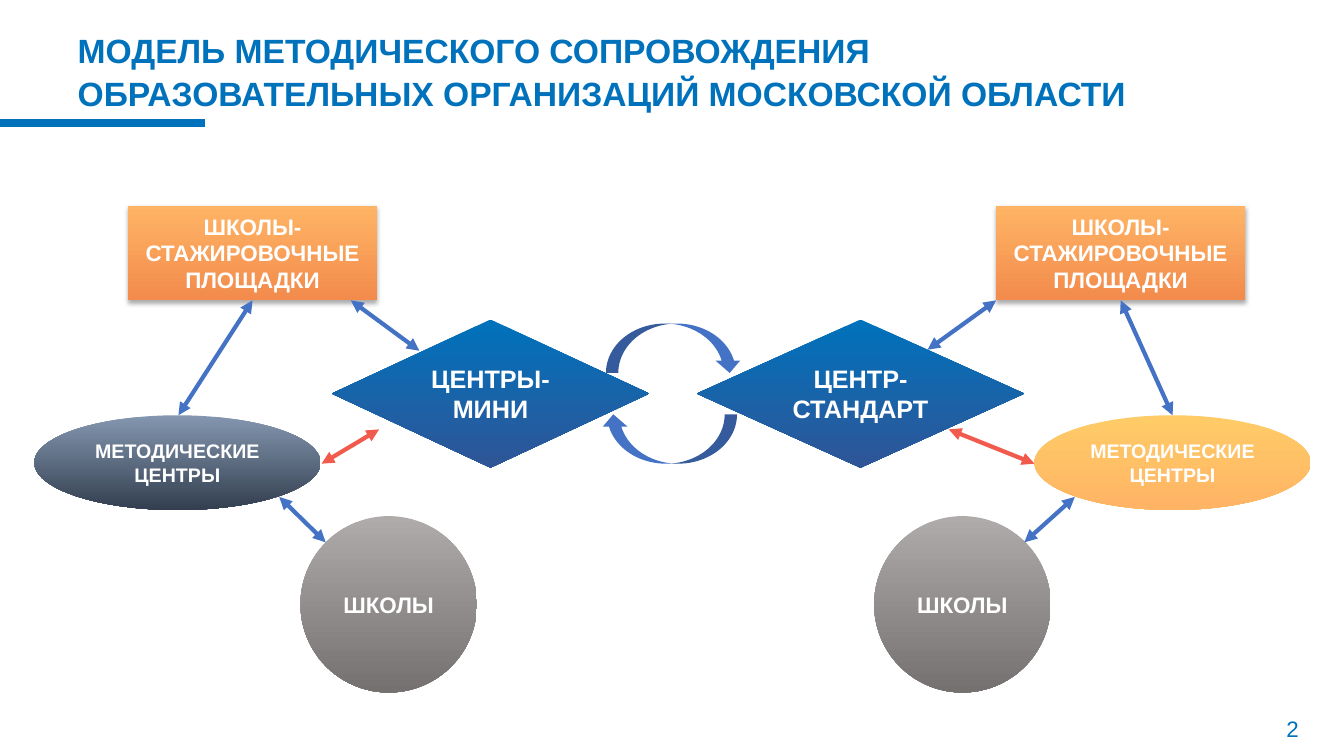
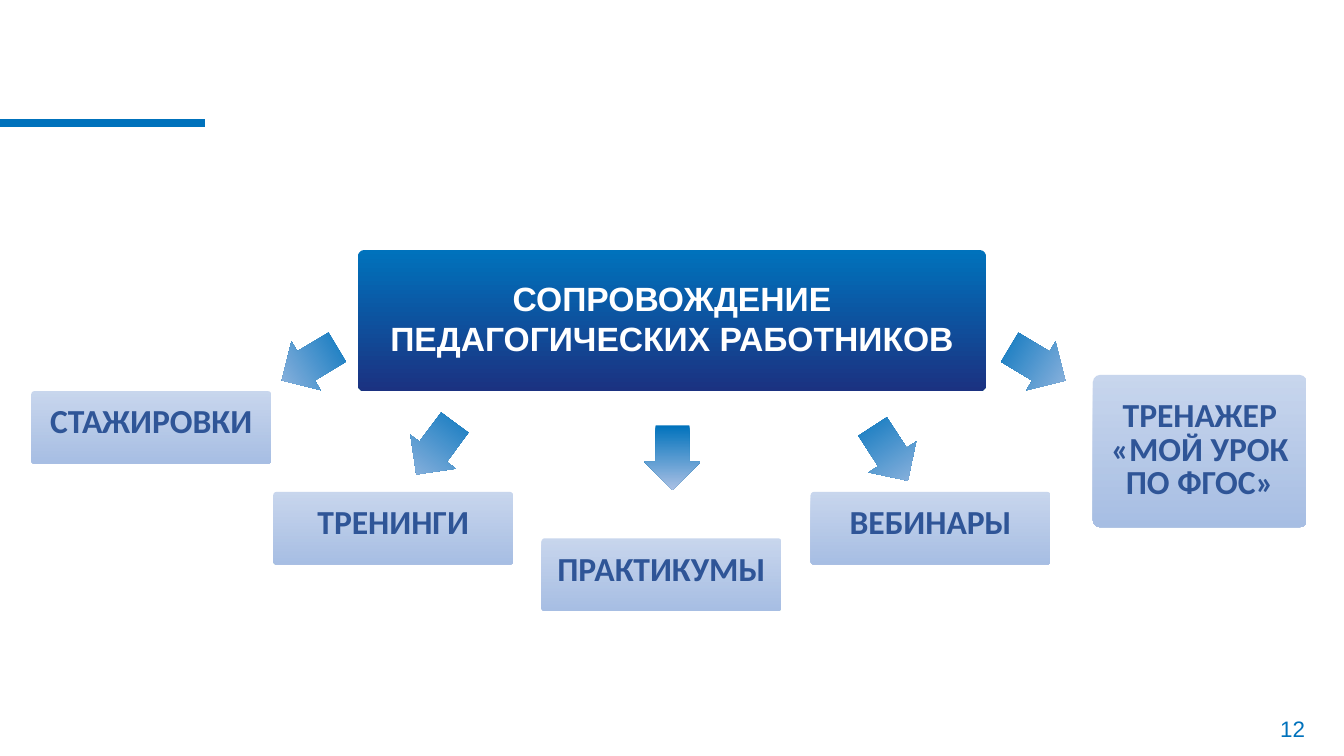
from lxml.etree import SubElement
from pptx import Presentation
from pptx.dml.color import RGBColor
from pptx.enum.shapes import MSO_CONNECTOR, MSO_SHAPE
from pptx.enum.text import MSO_ANCHOR, MSO_AUTO_SIZE, PP_ALIGN
from pptx.oxml.ns import qn
from pptx.util import Inches, Pt

BLUE = "0072BC"
DEEP_BLUE = "2F5597"
ARROW_BLUE = "4472C4"
RED = "F15B4D"
WHITE = "FFFFFF"
DIAMOND_FILL = (BLUE, DEEP_BLUE)
ORANGE_FILL = ("FFB465", "F28B4C")
SLATE_FILL = ("8497B0", "333F50")
YELLOW_FILL = ("FECB66", "FFB465")
GREY_FILL = ("AFABAB", "767171")
BANNER_FILL = (BLUE, "1B3281")
LABEL_FILL = ("B4C7E7", "87A6D9")
POINTER_FILL = (BLUE, "AAC0E4")
TOP_DOWN, RIGHT_TO_LEFT = 270, 180
CORNER = 0.045


def color(value):
    return RGBColor.from_string(value)


def write(box, text, size, text_color, font="Arial", bold=True,
          align=PP_ALIGN.CENTER, spacing=None, insets=(0.13, 0.07)):
    frame = box.text_frame
    frame.text = text
    frame.word_wrap = True
    frame.auto_size = MSO_AUTO_SIZE.NONE
    frame.vertical_anchor = MSO_ANCHOR.MIDDLE
    frame.margin_left = frame.margin_right = Inches(insets[0])
    frame.margin_top = frame.margin_bottom = Inches(insets[1])
    for para in frame.paragraphs:
        para.alignment = align
        if spacing:
            para.line_spacing = Pt(spacing)
        for span in para.runs:
            span.font.name = font
            span.font.size = Pt(size)
            span.font.bold = bold
            span.font.color.rgb = color(text_color)


def place(box, bounds):
    box.left, box.top, box.width, box.height = map(Inches, bounds)


def add_block(page, kind, bounds, fill, angle=TOP_DOWN, corner=None, alpha=None):
    block = page.shapes.add_shape(kind, *map(Inches, bounds))
    block.shadow.inherit = False
    block.line.fill.background()
    if corner is not None:
        block.adjustments[0] = corner
    if isinstance(fill, str):
        block.fill.solid()
        block.fill.fore_color.rgb = color(fill)
        return block
    block.fill.gradient()
    block.fill.gradient_angle = angle
    for stop, value in zip(block.fill.gradient_stops, fill):
        stop.color.rgb = color(value)
    if alpha:
        for tone in block.element.spPr.iter(qn("a:srgbClr")):
            SubElement(tone, qn("a:alpha"), val=str(alpha * 1000))
    return block


def add_drop_shadow(block):
    effects = block.element.spPr.find(qn("a:effectLst"))
    shadow = SubElement(effects, qn("a:outerShdw"), blurRad=str(Pt(3.5)),
                        dist=str(Pt(2.2)), dir="5400000", rotWithShape="0")
    tone = SubElement(shadow, qn("a:srgbClr"), val="000000")
    SubElement(tone, qn("a:alpha"), val="32000")


def add_line(page, start, end, line_color, width):
    line = page.shapes.add_connector(MSO_CONNECTOR.STRAIGHT, *map(Inches, start + end))
    line.line.color.rgb = color(line_color)
    line.line.width = Pt(width)
    SubElement(line.element.spPr, qn("a:effectLst"))
    return line


def add_double_arrow(page, start, end, line_color=ARROW_BLUE):
    arrow = add_line(page, start, end, line_color, 3)
    outline = arrow.line._get_or_add_ln()
    for tip in ("a:headEnd", "a:tailEnd"):
        SubElement(outline, qn(tip), type="triangle")
    return arrow


def start_page(deck, number):
    page = deck.slides.add_slide(deck.slide_layouts[5])
    add_line(page, (0, 1.22), (2.03, 1.22), BLUE, 6)
    number_box = page.shapes.add_textbox(*map(Inches, (12.42, 7.02, 0.8, 0.41)))
    write(number_box, str(number), 16, BLUE, bold=False, insets=(0.1, 0.05))
    return page


def add_school_site(page, left, center_top, corner_start, corner_end):
    site = add_block(page, MSO_SHAPE.RECTANGLE, (left, 2.04, 2.47, 0.94), ORANGE_FILL)
    add_drop_shadow(site)
    write(site, "ШКОЛЫ-СТАЖИРОВОЧНЫЕ ПЛОЩАДКИ", 16, WHITE)
    link = add_double_arrow(page, (left + 1.24, 2.98), center_top)
    link.begin_connect(site, 2)
    add_double_arrow(page, corner_start, corner_end)


def build_model(deck):
    page = start_page(deck, 2)
    title = page.shapes.title
    place(title, (0.67, 0.17, 11.51, 1.05))
    write(title, "МОДЕЛЬ МЕТОДИЧЕСКОГО СОПРОВОЖДЕНИЯ ОБРАЗОВАТЕЛЬНЫХ ОРГАНИЗАЦИЙ "
          "МОСКОВСКОЙ ОБЛАСТИ", 24, BLUE, align=PP_ALIGN.LEFT, spacing=31,
          insets=(0.1, 0.05))

    nodes = [
        (MSO_SHAPE.DIAMOND, (3.29, 3.17, 3.15, 1.47), DIAMOND_FILL, "ЦЕНТРЫ-МИНИ", 18),
        (MSO_SHAPE.DIAMOND, (6.91, 3.17, 3.25, 1.47), DIAMOND_FILL, "ЦЕНТР-\nСТАНДАРТ", 18),
        (MSO_SHAPE.OVAL, (0.34, 4.12, 2.84, 0.94), SLATE_FILL, "МЕТОДИЧЕСКИЕ ЦЕНТРЫ", 14),
        (MSO_SHAPE.OVAL, (10.26, 4.12, 2.74, 0.94), YELLOW_FILL, "МЕТОДИЧЕСКИЕ ЦЕНТРЫ", 14),
        (MSO_SHAPE.OVAL, (2.98, 5.12, 1.75, 1.75), GREY_FILL, "ШКОЛЫ", 16),
        (MSO_SHAPE.OVAL, (8.67, 5.12, 1.75, 1.75), GREY_FILL, "ШКОЛЫ", 16),
    ]
    for kind, bounds, fill, text, size in nodes:
        write(add_block(page, kind, bounds, fill), text, size, WHITE)

    add_school_site(page, 1.27, (1.77, 4.12), (3.48, 2.98), (4.16, 3.48))
    add_school_site(page, 9.88, (11.63, 4.12), (9.88, 2.98), (9.2, 3.47))
    add_double_arrow(page, (3.76, 4.26), (3.19, 4.6), RED)
    add_double_arrow(page, (10.26, 4.6), (9.41, 4.26), RED)
    add_double_arrow(page, (2.77, 4.93), (3.23, 5.38))
    add_double_arrow(page, (10.66, 4.93), (10.16, 5.38))

    for left, top, turn in ((6.01, 3.21, 0), (5.96, 4.11, 180)):
        cycle = add_block(page, MSO_SHAPE.CURVED_DOWN_ARROW, (left, top, 1.35, 0.49), ARROW_BLUE)
        cycle.rotation = turn


def build_support(deck):
    page = start_page(deck, 12)
    add_block(page, MSO_SHAPE.ROUNDED_RECTANGLE, (3.55, 2.48, 6.23, 1.4),
              BANNER_FILL, corner=CORNER)
    title = page.shapes.title
    place(title, (3.75, 2.7, 5.83, 0.91))
    write(title, "СОПРОВОЖДЕНИЕ ПЕДАГОГИЧЕСКИХ РАБОТНИКОВ", 24, WHITE, insets=(0.1, 0.05))
    page.shapes.element.append(title.element)

    pointers = [(2.75, 3.33, 329), (4, 4.17, 306.6), (6.35, 4.26, 270),
                (8.51, 4.22, 237), (9.97, 3.33, 211)]
    for left, top, turn in pointers:
        pointer = add_block(page, MSO_SHAPE.LEFT_ARROW, (left, top, 0.64, 0.56),
                            POINTER_FILL, RIGHT_TO_LEFT, corner=0.6)
        pointer.rotation = turn

    labels = [
        ((0.31, 3.88, 2.38, 0.72), "СТАЖИРОВКИ", 19),
        ((2.71, 4.88, 2.38, 0.72), "ТРЕНИНГИ", 19),
        ((5.37, 5.34, 2.38, 0.72), "ПРАКТИКУМЫ", 19),
        ((8.04, 4.88, 2.38, 0.72), "ВЕБИНАРЫ", 19),
        ((10.84, 3.72, 2.12, 1.51), "ТРЕНАЖЕР\n«МОЙ УРОК\nПО ФГОС»", 24),
    ]
    for bounds, text, spacing in labels:
        label = add_block(page, MSO_SHAPE.ROUNDED_RECTANGLE, bounds, LABEL_FILL,
                          corner=CORNER, alpha=73)
        write(label, text, 24, DEEP_BLUE, font="Calibri", spacing=spacing, insets=(0, 0))


def main():
    deck = Presentation()
    deck.slide_width = Inches(13.33)
    deck.slide_height = Inches(7.5)
    build_model(deck)
    build_support(deck)
    deck.save("out.pptx")


if __name__ == "__main__":
    main()
